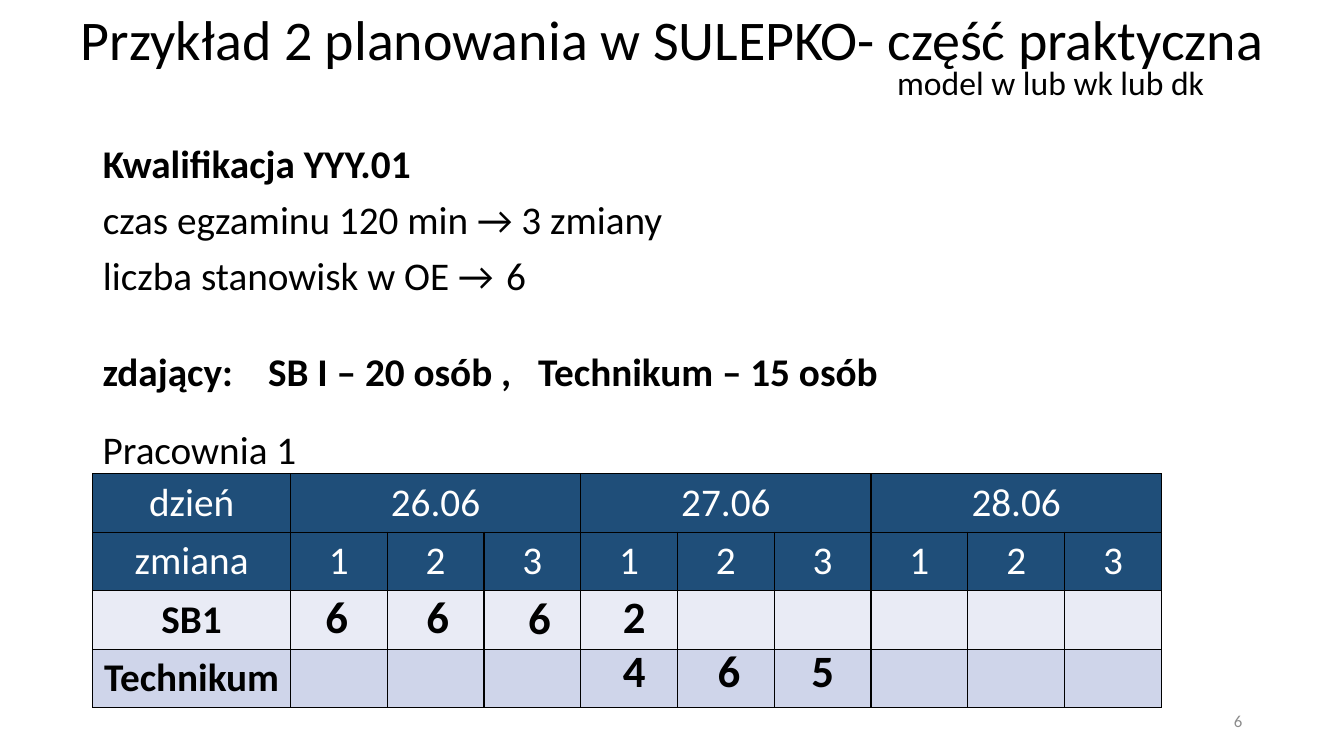
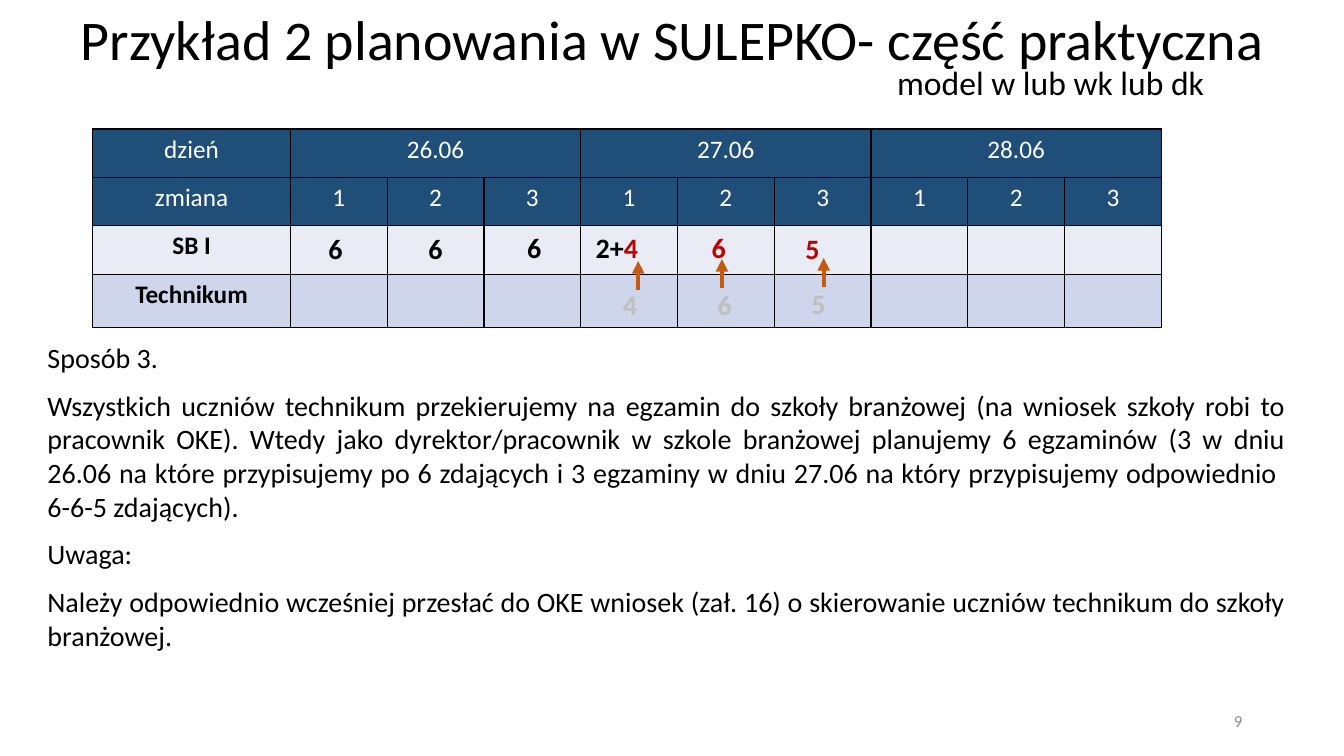
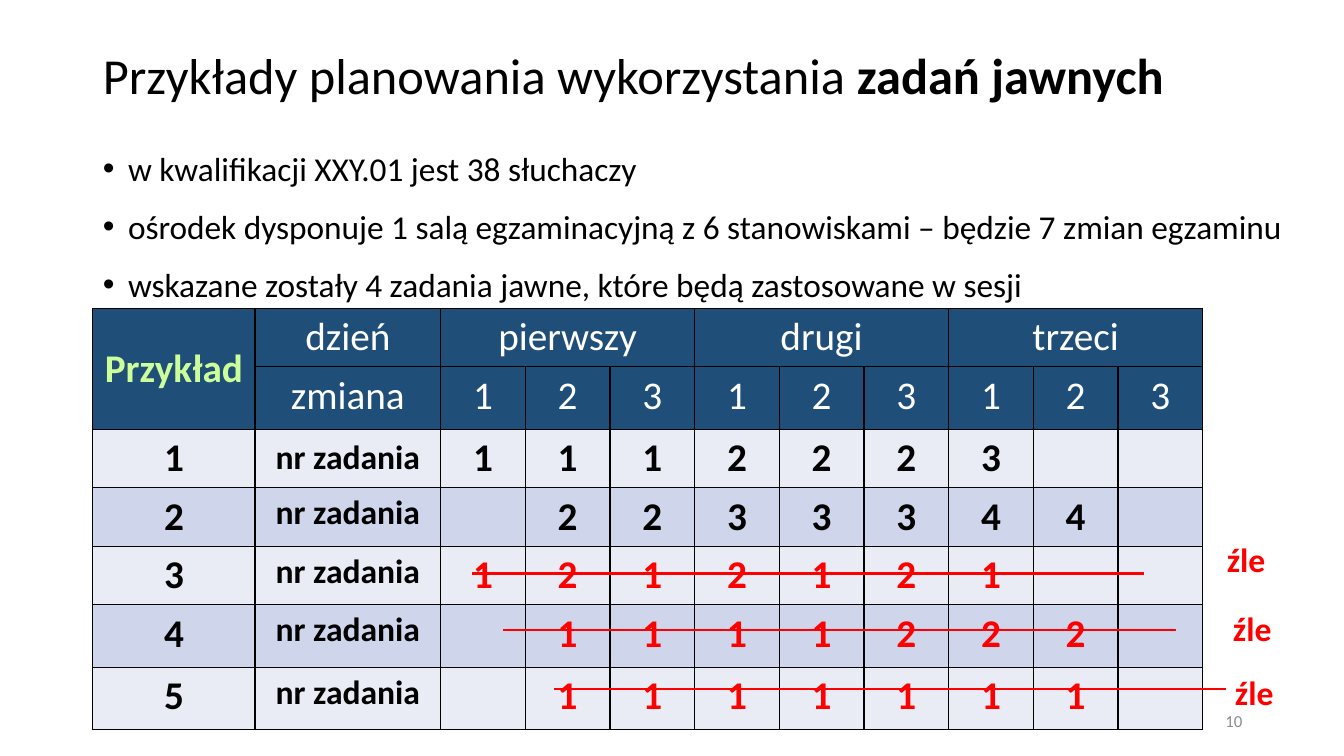
from dataclasses import dataclass

from lxml.etree import SubElement
from pptx import Presentation
from pptx.dml.color import RGBColor
from pptx.enum.shapes import MSO_CONNECTOR
from pptx.enum.text import MSO_ANCHOR, MSO_AUTO_SIZE, PP_ALIGN
from pptx.oxml.ns import qn
from pptx.util import Pt

EMU_PER_PX = 9144
DAY_SHIFTS = 3


@dataclass(frozen=True)
class Theme:
    font: str = "Calibri"
    black: str = "000000"
    white: str = "FFFFFF"
    header: str = "1F4E79"
    bands: tuple = ("E9EBF5", "CFD5EA")
    lime: str = "CCFF99"
    red: str = "FF0000"
    moved: str = "C00000"
    faded: str = "BFBFBF"
    arrow: str = "C55A11"
    number: str = "8C8C8C"
    title: float = 40
    task_title: float = 36
    value: float = 32
    large: float = 28
    label: float = 24
    bullet: float = 23.8
    text: float = 20
    small: float = 18
    footer: float = 12


THEME = Theme()


@dataclass(frozen=True)
class Box:
    left: int
    top: int
    width: int
    height: int

    def inside(self, left, top, width, height):
        return Box(self.left + left, self.top + top, width, height)

    def emu(self):
        return [px(side) for side in (self.left, self.top, self.width, self.height)]


@dataclass(frozen=True)
class Part:
    text: str
    color: str = THEME.black
    bold: bool = False


PAGE = Box(0, 0, 1333, 750)


def px(length):
    return length * EMU_PER_PX


def rgb(color):
    return RGBColor.from_string(color)


def write(paragraph, parts, size, align=PP_ALIGN.LEFT):
    paragraph.alignment = align
    for part in parts:
        for index, text in enumerate(part.text.split("\n")):
            if index:
                paragraph.add_line_break()
            run = paragraph.add_run()
            run.text = text
            run.font.name = THEME.font
            run.font.size = Pt(size)
            run.font.bold = part.bold
            run.font.color.rgb = rgb(part.color)


def set_tabs(paragraph, positions):
    tab_list = SubElement(paragraph._p.get_or_add_pPr(), qn("a:tabLst"))
    for position in positions:
        SubElement(tab_list, qn("a:tab"), pos=str(px(position)), algn="l")


def set_bullet(paragraph, bullet):
    properties = paragraph._p.get_or_add_pPr()
    indent = px(25) if bullet else 0
    properties.set("marL", str(indent))
    properties.set("indent", str(-indent))
    if bullet:
        SubElement(properties, qn("a:buFont"), typeface="Arial")
        SubElement(properties, qn("a:buChar"), char=bullet)
    else:
        SubElement(properties, qn("a:buNone"))


def place(shape, box):
    shape.left, shape.top, shape.width, shape.height = box.emu()
    return shape.text_frame


def add_text(slide, box, parts, size, align=PP_ALIGN.LEFT, tabs=()):
    frame = slide.shapes.add_textbox(*box.emu()).text_frame
    frame.word_wrap = True
    write(frame.paragraphs[0], parts, size, align)
    if tabs:
        set_tabs(frame.paragraphs[0], tabs)
    return frame


def add_line(slide, box, color, weight, arrow=False):
    connector = slide.shapes.add_connector(
        MSO_CONNECTOR.STRAIGHT, px(box.left), px(box.top),
        px(box.left + box.width), px(box.top + box.height))
    connector.line.color.rgb = rgb(color)
    connector.line.width = Pt(weight)
    if arrow:
        SubElement(connector.line._get_or_add_ln(), qn("a:tailEnd"), type="triangle")
    SubElement(connector._element.spPr, qn("a:effectLst"))


def add_page(presentation, number):
    slide = presentation.slides.add_slide(presentation.slide_layouts[1])
    box = PAGE.inside(942, 695, 300, 40)
    frame = add_text(slide, box, [Part(number, THEME.number)], THEME.footer, PP_ALIGN.RIGHT)
    frame.vertical_anchor = MSO_ANCHOR.MIDDLE
    return slide


def add_title(slide, box, parts, size, anchor):
    frame = place(slide.shapes.title, box)
    frame.auto_size = MSO_AUTO_SIZE.NONE
    frame.vertical_anchor = anchor
    write(frame.paragraphs[0], parts, size)
    frame.paragraphs[0].line_spacing = 0.9
    return frame


def add_example_heading(slide, box):
    frame = add_title(slide, box, [Part("Przykład 2 planowania w SULEPKO- część praktyczna")],
                      THEME.title, MSO_ANCHOR.TOP)
    frame.margin_top = px(12)
    add_text(slide, box.inside(810, 57, 363, 50), [Part("model w lub wk lub dk")], THEME.label)


def add_body(slide, box, lines, size, spacing, bullet=None, align=PP_ALIGN.LEFT):
    frame = place(slide.placeholders[1], box)
    frame.auto_size = MSO_AUTO_SIZE.NONE
    for index, part in enumerate(lines):
        paragraph = frame.add_paragraph() if index else frame.paragraphs[0]
        write(paragraph, [part], size, align)
        paragraph.line_spacing = spacing
        paragraph.space_before = Pt(10)
        set_bullet(paragraph, bullet)
    return frame


def format_cell(cell, fill):
    properties = cell._tc.get_or_add_tcPr()
    for side in ("a:lnL", "a:lnR", "a:lnT", "a:lnB"):
        line = SubElement(properties, qn(side), w=str(Pt(1)))
        color = SubElement(SubElement(line, qn("a:solidFill")), qn("a:srgbClr"))
        color.set("val", THEME.black)
    cell.fill.solid()
    cell.fill.fore_color.rgb = rgb(fill)


def add_schedule(slide, box, labels, shift_width, heights, days, rows, size, wrong=()):
    shift_count = DAY_SHIFTS * len(days)
    widths = labels + [shift_width] * shift_count
    lead = len(labels)
    blank = [""] * (lead - 1)
    day_row = blank + ["dzień"]
    for day in days:
        day_row += [day] + [""] * (DAY_SHIFTS - 1)
    shift_row = blank + ["zmiana"] + [str(i % DAY_SHIFTS + 1) for i in range(shift_count)]
    grid = [day_row, shift_row] + rows

    table = slide.shapes.add_table(len(grid), len(widths), *box.emu()).table
    table.first_row = table.horz_banding = False
    for column, width in zip(table.columns, widths):
        column.width = px(width)
    for row, height in zip(table.rows, heights):
        row.height = px(height)
    for row_index, values in enumerate(grid):
        is_header = row_index < 2
        for column_index, text in enumerate(values):
            cell = table.cell(row_index, column_index)
            format_cell(cell, THEME.header if is_header else THEME.bands[row_index % 2])
            color = THEME.white if is_header else THEME.black
            if row_index in wrong and column_index >= lead:
                color = THEME.red
            if text:
                text_size = THEME.label if text == "nr zadania" else size
                write(cell.text_frame.paragraphs[0], [Part(text, color, not is_header)],
                      text_size, PP_ALIGN.CENTER)
    for first in range(lead, len(widths), DAY_SHIFTS):
        table.cell(0, first).merge(table.cell(0, first + DAY_SHIFTS - 1))
    return table


def add_exam_schedule(slide, box, heights, school, size):
    rows = [[name] + [""] * 9 for name in (school, "Technikum")]
    add_schedule(slide, box, [196], 96, heights, ["26.06", "27.06", "28.06"], rows, size)


def build_capacity_slide(presentation):
    slide = add_page(presentation, "6")
    add_example_heading(slide, PAGE.inside(70, 0, 1219, 145))
    lines = [Part("Kwalifikacja YYY.01", bold=True),
             Part("czas egzaminu 120 min → 3 zmiany"),
             Part("liczba stanowisk w OE →\t6")]
    body = add_body(slide, PAGE.inside(92, 138, 1150, 183), lines, THEME.large, 0.9)
    set_tabs(body.paragraphs[2], [410])
    add_text(slide, PAGE.inside(92, 340, 1150, 57),
             [Part("zdający:\tSB I – 20 osób ,\tTechnikum – 15 osób", bold=True)],
             THEME.large, tabs=[164, 432])
    add_text(slide, PAGE.inside(92, 417, 378, 57), [Part("Pracownia 1")], THEME.large)

    box = PAGE.inside(92, 470, 1060, 232)
    add_exam_schedule(slide, box, [58] * 4, "SB1", THEME.large)
    for left, top, value in [(221, 109, "6"), (321, 109, "6"), (422, 110, "6"), (516, 109, "2"),
                             (516, 163, "4"), (610, 163, "6"), (703, 163, "5")]:
        add_text(slide, box.inside(left, top, 46, 64), [Part(value, bold=True)], THEME.value)


def build_redirect_slide(presentation):
    slide = add_page(presentation, "9")
    add_example_heading(slide, PAGE.inside(70, 0, 1219, 145))
    lines = [
        "Sposób 3.",
        "Wszystkich uczniów technikum przekierujemy na egzamin do szkoły branżowej (na wniosek "
        "szkoły robi to pracownik OKE). Wtedy jako dyrektor/pracownik w szkole branżowej planujemy "
        "6 egzaminów (3 w dniu 26.06 na które przypisujemy po 6 zdających i 3 egzaminy w dniu 27.06 "
        "na który przypisujemy odpowiednio \n6-6-5 zdających).",
        "Uwaga:",
        "Należy odpowiednio wcześniej przesłać do OKE wniosek (zał. 16) o skierowanie uczniów "
        "technikum do szkoły branżowej.",
    ]
    add_body(slide, PAGE.inside(37, 333, 1248, 348), [Part(line) for line in lines],
             THEME.text, 1.0, align=PP_ALIGN.JUSTIFY)

    box = PAGE.inside(92, 128, 1060, 197)
    add_exam_schedule(slide, box, [48, 48, 48, 53], "SB I", THEME.small)
    for left, top, value, color in [
            (224, 97, "6", THEME.black), (323, 97, "6", THEME.black), (421, 96, "6", THEME.black),
            (516, 152, "4", THEME.faded), (610, 152, "6", THEME.faded), (703, 151, "5", THEME.faded),
            (604, 96, "6", THEME.moved), (697, 97, "5", THEME.moved)]:
        add_text(slide, box.inside(left, top, 46, 44), [Part(value, color, True)], THEME.text)
    add_text(slide, box.inside(489, 96, 71, 44),
             [Part("2+", bold=True), Part("4", THEME.moved, True)], THEME.text)
    for left, top in [(541, 160), (624, 158), (725, 157)]:
        add_line(slide, box.inside(left, top, 0, -29), THEME.arrow, 3, arrow=True)


def build_tasks_slide(presentation):
    slide = add_page(presentation, "10")
    add_title(slide, PAGE.inside(92, 40, 1150, 76),
              [Part("Przykłady planowania wykorzystania "), Part("zadań jawnych", bold=True)],
              THEME.task_title, MSO_ANCHOR.MIDDLE)
    lines = ["w kwalifikacji XXY.01 jest 38 słuchaczy",
             "ośrodek dysponuje 1 salą egzaminacyjną z 6 stanowiskami – będzie 7 zmian egzaminu",
             "wskazane zostały 4 zadania jawne, które będą zastosowane w sesji"]
    add_body(slide, PAGE.inside(92, 138, 1207, 174), [Part(line) for line in lines],
             THEME.bullet, 1.1, bullet="•")

    box = PAGE.inside(92, 306, 1101, 418)
    plans = ["1112223  ", " 2233344 ", "1212121  ", " 1111222 ", " 1111111 "]
    rows = [[str(number), "nr zadania"] + [task.strip() for task in plan]
            for number, plan in enumerate(plans, 1)]
    table = add_schedule(slide, box, [161, 184], 84, [58, 62, 58, 58, 58, 62, 62],
                         ["pierwszy", "drugi", "trzeci"], rows, THEME.large, wrong=(4, 5, 6))
    table.cell(2, 1).vertical_anchor = MSO_ANCHOR.MIDDLE
    corner = table.cell(0, 0)
    corner.merge(table.cell(1, 0))
    corner.vertical_anchor = MSO_ANCHOR.MIDDLE
    write(corner.text_frame.paragraphs[0], [Part("Przykład", THEME.lime, True)],
          THEME.large, PP_ALIGN.CENTER)

    for strike_left, strike_top, label_left, label_top in [
            (376, 263, 1115, 224), (407, 319, 1121, 292), (457, 378, 1123, 356)]:
        add_line(slide, box.inside(strike_left, strike_top, 667, 0), THEME.red, 1.5)
        add_text(slide, box.inside(label_left, label_top, 69, 50),
                 [Part("źle", THEME.red, True)], THEME.label)


def main():
    presentation = Presentation()
    presentation.slide_width = px(PAGE.width)
    presentation.slide_height = px(PAGE.height)
    build_capacity_slide(presentation)
    build_redirect_slide(presentation)
    build_tasks_slide(presentation)
    presentation.save("out.pptx")


if __name__ == "__main__":
    main()
